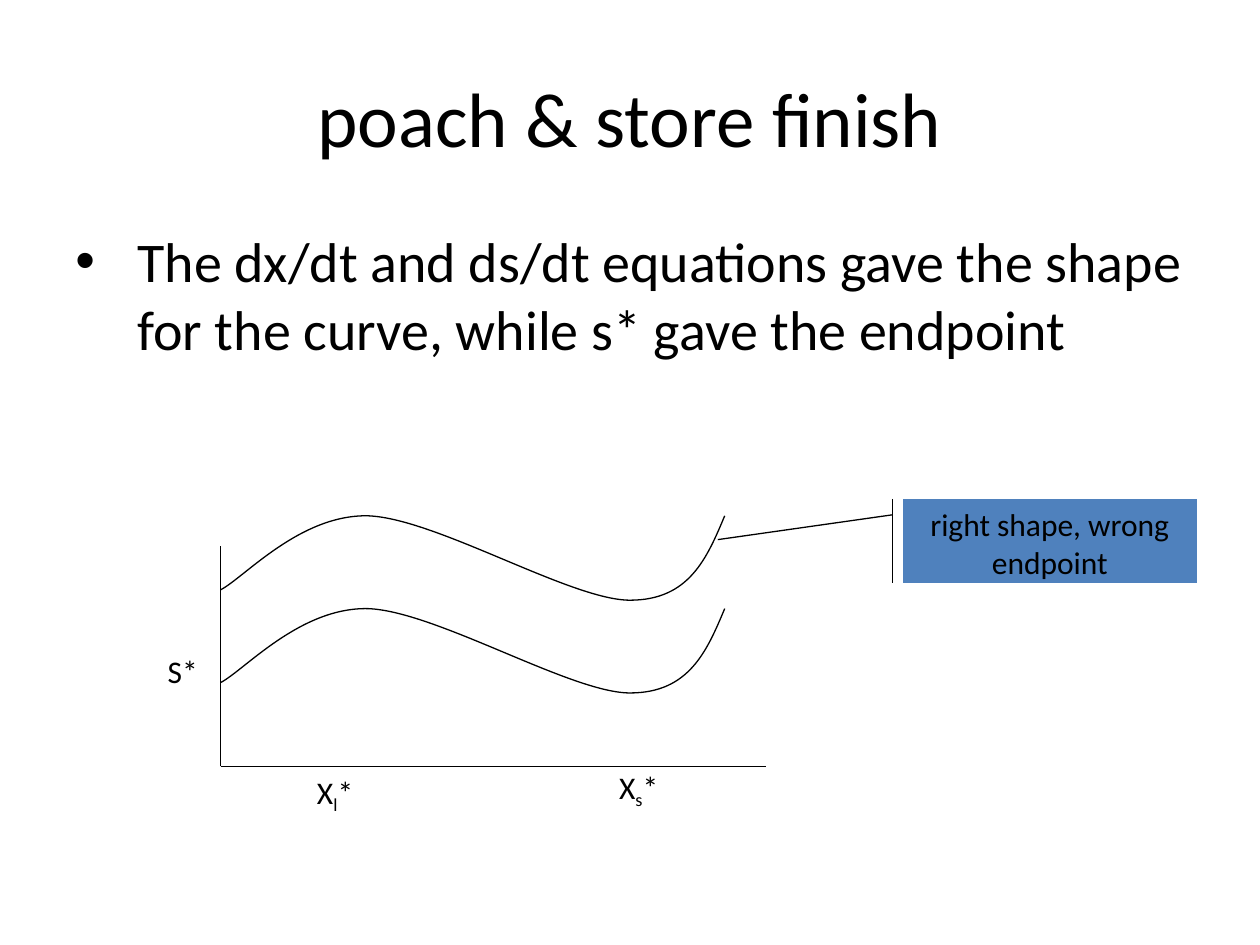
from dataclasses import dataclass
from itertools import chain

from lxml.etree import SubElement
from pptx import Presentation
from pptx.dml.color import RGBColor
from pptx.enum.shapes import MSO_CONNECTOR as Connector, MSO_SHAPE as Shape
from pptx.enum.text import MSO_ANCHOR as Anchor, PP_ALIGN as Align
from pptx.oxml.ns import qn
from pptx.util import Cm, Pt


@dataclass(frozen=True)
class Theme:
    font: str = "Calibri"
    ink: RGBColor = RGBColor(0x00, 0x00, 0x00)
    callout: RGBColor = RGBColor(0x4F, 0x81, 0xBD)
    title: float = 44
    body: float = 32
    label: float = 18
    stroke: float = 0.75


THEME = Theme()

# Axes and curves, in cm
ORIGIN_X, ORIGIN_Y = 4.45, 15.45
AXIS_TOP, AXIS_RIGHT = 11.0, 15.45
CURVE_START = (14.61, 12.27)
CURVE_BENDS = [
    ((14.25, 13.13), (13.89, 13.97), (12.7, 13.97)),
    ((11.51, 13.97), (8.79, 12.32), (7.42, 12.27)),
    ((6.05, 12.24), (4.93, 13.51), (ORIGIN_X, 13.76)),
]
CURVE_GAP = 1.87


def write(frame, text, *, size, subscript="", suffix="", align=Align.LEFT,
          anchor=Anchor.TOP, wrap=True):
    """Fill the frame with one paragraph and return that paragraph."""
    frame.word_wrap = wrap
    frame.vertical_anchor = anchor
    paragraph = frame.paragraphs[0]
    paragraph.alignment = align
    for part, baseline in ((text, 0), (subscript, -25000), (suffix, 0)):
        if not part:
            continue
        run = paragraph.add_run()
        run.text = part
        run.font.name = THEME.font
        run.font.size = Pt(size)
        run.font.color.rgb = THEME.ink
        if baseline:
            run.font._element.set("baseline", str(baseline))
    return paragraph


def add_text(slide, box, text, **text_format):
    frame = slide.shapes.add_textbox(*map(Cm, box)).text_frame
    return write(frame, text, **text_format)


def add_bullet(paragraph, indent):
    paragraph.space_before = Pt(THEME.body * 0.2)
    properties = paragraph._p.get_or_add_pPr()
    properties.set("marL", str(Cm(indent)))
    properties.set("indent", str(-Cm(indent)))
    SubElement(properties, qn("a:buFont"), typeface="Arial")
    SubElement(properties, qn("a:buChar"), char="•")


def ink_line(line):
    line.color.rgb = THEME.ink
    line.width = Pt(THEME.stroke)


def add_axis(slide, end_x, end_y):
    axis = slide.shapes.add_connector(
        Connector.STRAIGHT, *map(Cm, (ORIGIN_X, ORIGIN_Y, end_x, end_y)))
    ink_line(axis.line)
    SubElement(axis._element.spPr, qn("a:effectLst"))


def bend_segments(freeform):
    """Turn each three straight segments into one cubic Bézier segment."""
    segments = list(freeform._element.iter(qn("a:lnTo")))
    for first in range(0, len(segments), 3):
        bend = SubElement(segments[first].getparent(), qn("a:cubicBezTo"))
        for segment in segments[first:first + 3]:
            segment.getparent().remove(segment)
            bend.append(segment[0])


def add_curve(slide, rise):
    def place(point):
        return Cm(point[0]), Cm(point[1] - rise)

    builder = slide.shapes.build_freeform(*place(CURVE_START))
    builder.add_line_segments(
        [place(point) for point in chain.from_iterable(CURVE_BENDS)], close=False)
    curve = builder.convert_to_shape()
    bend_segments(curve)
    curve.shadow.inherit = False
    curve.fill.background()
    ink_line(curve.line)


def add_callout(slide, box, text, pointer):
    """Add a callout whose pointer runs between two (x, y) offsets from its corner."""
    callout = slide.shapes.add_shape(Shape.LINE_CALLOUT_1_ACCENT_BAR, *map(Cm, box))
    width, height = box[2:]
    for end, (x, y) in enumerate(pointer):
        callout.adjustments[2 * end] = y / height
        callout.adjustments[2 * end + 1] = x / width
    callout.shadow.inherit = False
    callout.fill.solid()
    callout.fill.fore_color.rgb = THEME.callout
    ink_line(callout.line)
    write(callout.text_frame, text, size=THEME.label, align=Align.CENTER)


def main():
    deck = Presentation()
    deck.slide_width, deck.slide_height = Cm(25.4), Cm(19.05)
    slide = deck.slides.add_slide(deck.slide_layouts[6])

    add_text(slide, (1.27, 0.76, 22.86, 3.18), "poach & store finish",
             size=THEME.title, align=Align.CENTER, anchor=Anchor.MIDDLE)
    statement = add_text(
        slide, (1.27, 4.45, 22.86, 12.57),
        "The dx/dt and ds/dt equations gave the shape for the curve, "
        "while s* gave the endpoint", size=THEME.body)
    add_bullet(statement, 1.25)

    add_axis(slide, AXIS_RIGHT, ORIGIN_Y)
    add_axis(slide, ORIGIN_X, AXIS_TOP)
    for rise in (0, CURVE_GAP):
        add_curve(slide, rise)

    for box, text, subscript, suffix in (
        ((12.23, 15.35, 1.4, 1.02), "X", "s", "*"),
        ((6.14, 15.45, 1.27, 1.02), "X", "l", "*"),
        ((3.13, 13.01, 1.19, 1.02), "S*", "", ""),
    ):
        add_text(slide, box, text, subscript=subscript, suffix=suffix,
                 size=THEME.label, wrap=False)

    add_callout(slide, (18.2, 10.06, 5.93, 1.69), "right shape, wrong endpoint",
                pointer=((-0.21, 0.32), (-3.73, 0.82)))
    deck.save("out.pptx")


if __name__ == "__main__":
    main()
